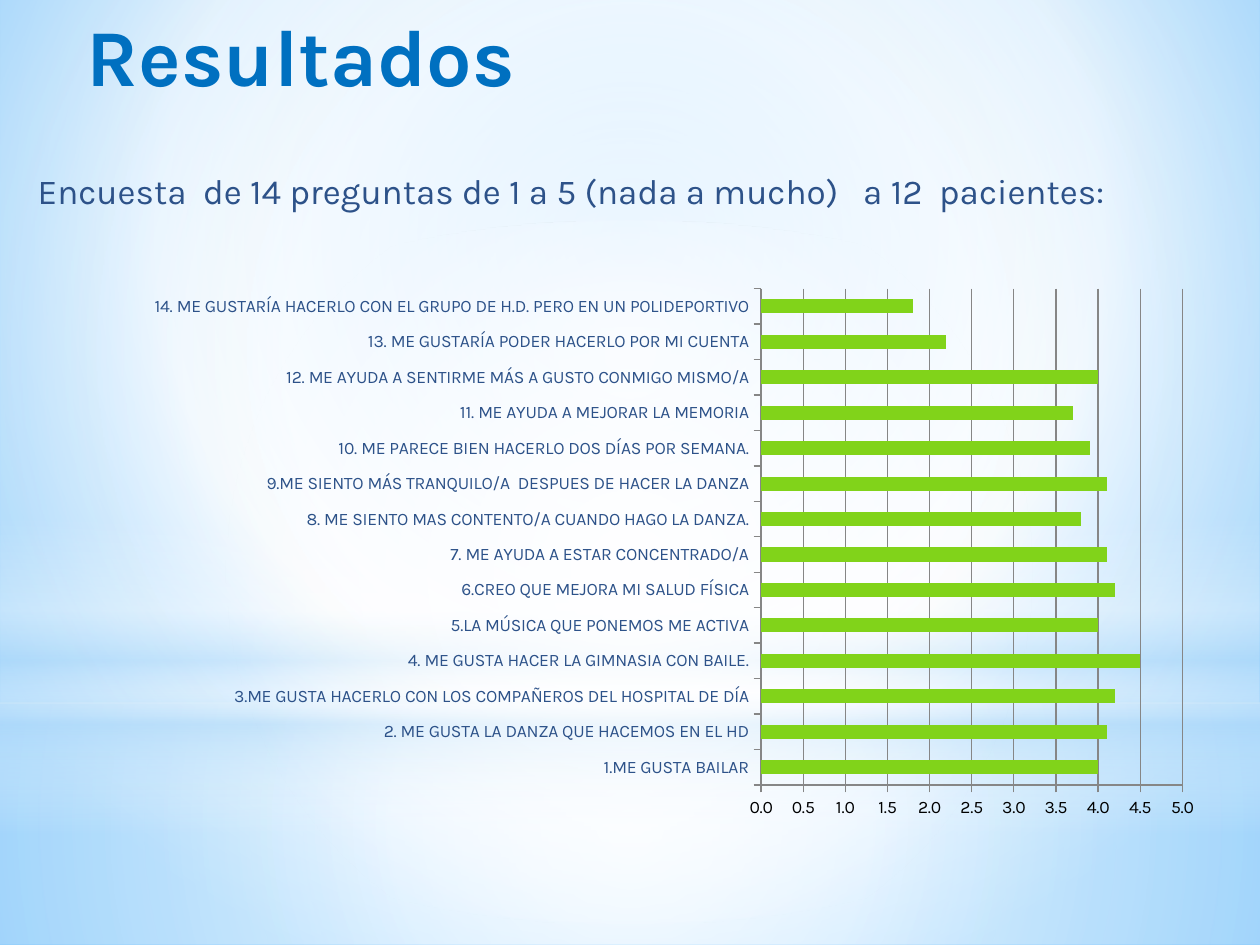
import pptx
import pptx.util
import pptx.chart.data
import pptx.dml.color
import pptx.enum.chart
import pptx.enum.shapes
import pptx.enum.text
import pptx.oxml.ns
import lxml.etree

Inches = pptx.util.Inches
qn = pptx.oxml.ns.qn

COLORS = {
    "title": "0070C0",
    "text": "2D5289",
    "bar": "81D31A",
    "axis": "868686",
    "black": "000000",
    "white": "FFFFFF",
    "haze": "B4DCFA",
    "sky": "9ED5FF",
    "deep": "5BB9FF",
}
FONT = "Karla"
TITLE = "Resultados"
SUBTITLE = "Encuesta  de 14 preguntas de 1 a 5 (nada a mucho)   a 12  pacientes:"
ANSWERS = [
    ("1.ME GUSTA BAILAR", 4),
    ("2. ME GUSTA LA DANZA QUE HACEMOS EN EL HD", 4.1),
    ("3.ME GUSTA HACERLO CON LOS COMPAÑEROS DEL HOSPITAL DE DÍA", 4.2),
    ("4. ME GUSTA HACER LA GIMNASIA CON BAILE.", 4.5),
    ("5.LA MÚSICA QUE PONEMOS ME ACTIVA", 4),
    ("6.CREO QUE MEJORA MI SALUD FÍSICA", 4.2),
    ("7. ME AYUDA A ESTAR CONCENTRADO/A", 4.1),
    ("8. ME SIENTO MAS CONTENTO/A CUANDO HAGO LA DANZA.", 3.8),
    ("9.ME SIENTO MÁS TRANQUILO/A  DESPUES DE HACER LA DANZA", 4.1),
    ("10. ME PARECE BIEN HACERLO DOS DÍAS POR SEMANA.", 3.9),
    ("11. ME AYUDA A MEJORAR LA MEMORIA", 3.7),
    ("12. ME AYUDA A SENTIRME MÁS A GUSTO CONMIGO MISMO/A", 4),
    ("13. ME GUSTARÍA PODER HACERLO POR MI CUENTA", 2.2),
    ("14. ME GUSTARÍA HACERLO CON EL GRUPO DE H.D. PERO EN UN POLIDEPORTIVO", 1.8),
]

CENTER = (50, 50, 50, 50)
BACKDROP = [(0, "sky", 100), (60, "white", 100), (100, "deep", 100)]
GLOWS = [
    ("RECTANGLE", (0, 5.58, 10, 1.92), CENTER,
     [(0, "white", 91), (37, "white", 76), (100, "haze", 79)]),
    ("RECTANGLE", (0, 0, 10, 5.58), CENTER,
     [(0, "white", 89), (48, "white", 62), (100, "haze", 79)]),
    ("RECTANGLE", (0, 4.12, 10, 2.5), None,
     [(0, "white", 0), (29, "white", 30), (45, "haze", 40),
      (55, "white", 26), (65, "haze", 60), (100, "white", 0)]),
    ("OVAL", (0, 1.75, 10, 5.58), CENTER,
     [(0, "white", 100), (56, "white", 0)]),
]
PLOT = {"x": 0.665, "y": 0.042, "w": 0.298, "h": 0.862}


def rgb(name):
    return pptx.dml.color.RGBColor.from_string(COLORS[name])


def apply(target, values):
    for name, value in values.items():
        setattr(target, name, value)


def add_node(parent, tag, **attributes):
    node = lxml.etree.SubElement(parent, qn(tag))
    for name, value in attributes.items():
        node.set(name, str(value))
    return node


def paint_gradient(fill, element, stops, focus):
    fill.gradient()
    gradient = element.find(".//" + qn("a:gradFill"))
    for child in list(gradient):
        gradient.remove(child)
    stop_list = add_node(gradient, "a:gsLst")
    for position, color, opacity in stops:
        stop = add_node(stop_list, "a:gs", pos=position * 1000)
        shade = add_node(stop, "a:srgbClr", val=COLORS[color])
        if opacity < 100:
            add_node(shade, "a:alpha", val=opacity * 1000)
    if focus is None:
        add_node(gradient, "a:lin", ang=90 * 60000, scaled=0)
    else:
        circle = add_node(gradient, "a:path", path="circle")
        sides = {side: share * 1000 for side, share in zip("ltrb", focus)}
        add_node(circle, "a:fillToRect", **sides)


def format_font(font, size, color, bold=False):
    apply(font, {"name": FONT, "size": pptx.util.Pt(size), "bold": bold})
    font.color.rgb = rgb(color)


def write_text(box, text, size, color, bold=False):
    frame = box.text_frame
    apply(frame, {
        "word_wrap": True,
        "vertical_anchor": pptx.enum.text.MSO_ANCHOR.TOP,
        "margin_top": Inches(0.05),
    })
    para = frame.paragraphs[0]
    para.alignment = pptx.enum.text.PP_ALIGN.LEFT
    span = para.add_run()
    span.text = text
    format_font(span.font, size, color, bold)


def add_glows(page):
    for kind, place, focus, stops in GLOWS:
        glow = page.shapes.add_shape(
            getattr(pptx.enum.shapes.MSO_SHAPE, kind), *map(Inches, place))
        glow.shadow.inherit = False
        glow.line.fill.background()
        paint_gradient(glow.fill, glow.element, stops, focus)


def add_survey_chart(page):
    data = pptx.chart.data.CategoryChartData()
    data.categories = [question for question, score in ANSWERS]
    data.add_series("Series 1", [score for question, score in ANSWERS])
    chart = page.shapes.add_chart(
        pptx.enum.chart.XL_CHART_TYPE.BAR_CLUSTERED,
        *map(Inches, (-1.42, 2.1, 11.22, 4.57)), data).chart
    apply(chart, {"has_legend": False, "has_title": False})
    format_font(chart.font, 10, "black")

    plot = chart.plots[0]
    apply(plot, {"gap_width": 150, "vary_by_categories": False})
    bars = plot.series[0].format.fill
    bars.solid()
    bars.fore_color.rgb = rgb("bar")

    questions, scores = chart.category_axis, chart.value_axis
    apply(scores, {"minimum_scale": 0, "maximum_scale": 5,
                   "major_unit": 0.5, "has_major_gridlines": True})
    apply(scores.tick_labels, {"number_format": "0.0",
                               "number_format_is_linked": False})
    format_font(questions.tick_labels.font, 10, "text")
    for axis in (questions, scores):
        axis.major_tick_mark = pptx.enum.chart.XL_TICK_MARK.OUTSIDE
    for line in (questions.format.line, scores.format.line,
                 scores.major_gridlines.format.line):
        line.color.rgb = rgb("axis")
        line.width = pptx.util.Pt(0.75)

    area = plot._element.getparent()
    layout = area.find(qn("c:layout"))
    if layout is None:
        layout = lxml.etree.Element(qn("c:layout"))
        area.insert(0, layout)
    manual = add_node(layout, "c:manualLayout")
    add_node(manual, "c:layoutTarget", val="inner")
    for side in "xy":
        add_node(manual, f"c:{side}Mode", val="edge")
    for side, share in PLOT.items():
        add_node(manual, f"c:{side}", val=share)


def main():
    deck = pptx.Presentation()
    apply(deck, {"slide_width": Inches(10), "slide_height": Inches(7.5)})
    page = deck.slides.add_slide(deck.slide_layouts[5])
    paint_gradient(page.background.fill, page.element, BACKDROP, (20, 10, 20, 60))
    add_glows(page)

    title = page.shapes.title
    title.element.getparent().append(title.element)
    apply(title, {"left": Inches(0.59), "top": Inches(0),
                  "width": Inches(4.25), "height": Inches(1.25)})
    write_text(title, TITLE, 46, "title", bold=True)

    add_survey_chart(page)
    subtitle = page.shapes.add_textbox(*map(Inches, (0.2, 1.3, 9.61, 0.44)))
    write_text(subtitle, SUBTITLE, 20, "text")
    deck.save("out.pptx")


if __name__ == "__main__":
    main()
